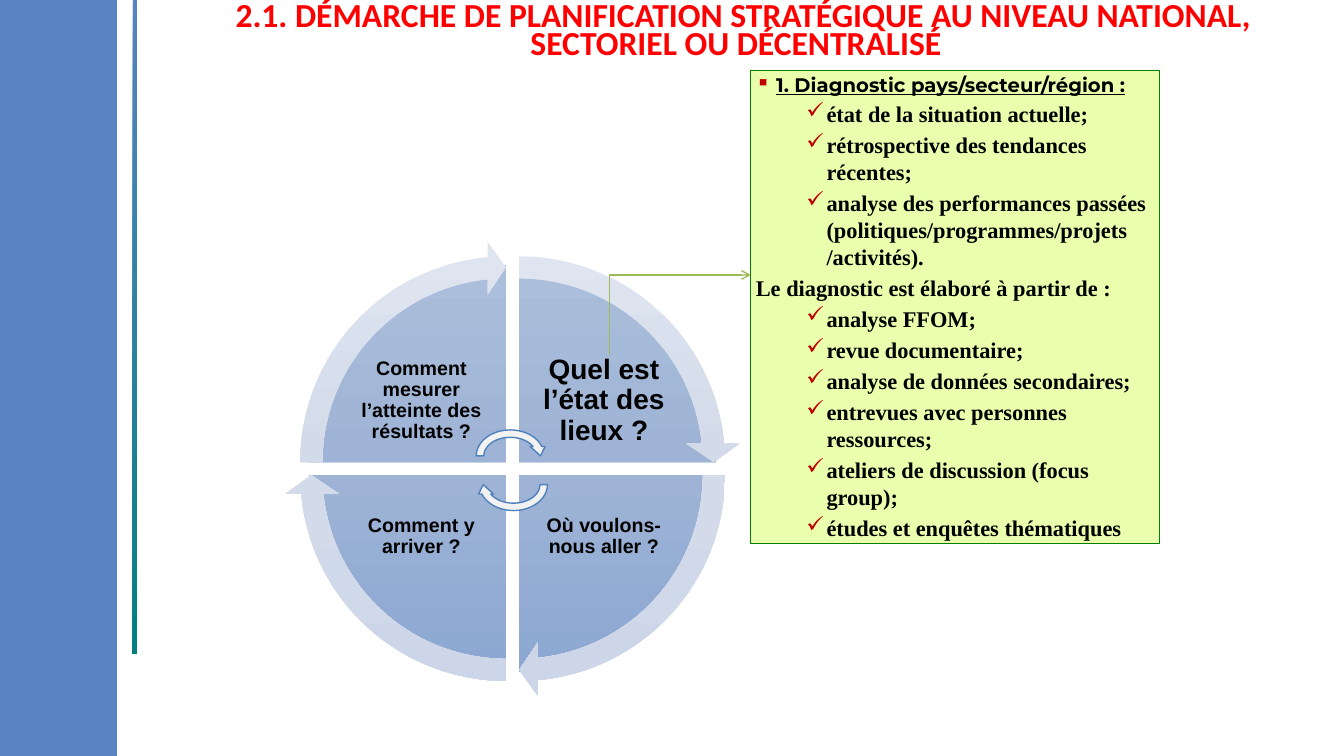
from lxml import etree
from pptx import Presentation
from pptx.dml.color import RGBColor
from pptx.enum.shapes import MSO_CONNECTOR, MSO_SHAPE
from pptx.enum.text import MSO_ANCHOR, PP_ALIGN
from pptx.oxml.ns import qn
from pptx.util import Cm, Pt

RECTANGLE, PIE, CIRCULAR_ARROW = MSO_SHAPE.RECTANGLE, MSO_SHAPE.PIE, MSO_SHAPE.CIRCULAR_ARROW
ELBOW = MSO_CONNECTOR.ELBOW
CENTER, MIDDLE, LEFT = PP_ALIGN.CENTER, MSO_ANCHOR.MIDDLE, PP_ALIGN.LEFT

TITLE = "2.1. DÉMARCHE DE PLANIFICATION STRATÉGIQUE AU NIVEAU NATIONAL, SECTORIEL OU DÉCENTRALISÉ"
QUESTIONS = [
    ("Quel est l’état des lieux ?", "key_question", 1, -1),
    ("Où voulons-nous aller ?", "question", 1, 1),
    ("Comment y arriver ?", "question", -1, 1),
    ("Comment mesurer l’atteinte des résultats ?", "question", -1, -1),
]
DIAGNOSTIC = [
    ("heading", "1. Diagnostic pays/secteur/région :"),
    ("check", "état de la situation actuelle;"),
    ("check", "rétrospective des tendances récentes;"),
    ("check", "analyse des performances passées (politiques/programmes/projets /activités)."),
    ("plain", "Le diagnostic est élaboré à partir de :"),
    ("check", "analyse FFOM;"),
    ("check", "revue documentaire;"),
    ("check", "analyse de données secondaires;"),
    ("check", "entrevues avec personnes ressources;"),
    ("check", "ateliers de discussion (focus group);"),
    ("check", "études et enquêtes thématiques"),
]
LEVELS = {
    "heading": (0, 0.51, "▪"),
    "plain": (0, 0.51, None),
    "check": (1, 1.78, "✓"),
}
HANGING = 0.51

THEME = {
    "side": "5A84C3",
    "accent": [(0, "008080"), (100, "5A84C3")],
    "pie": [(0, "ABBEDB"), (50, "9EB3D5"), (100, "8CA7D2")],
    "ring": [(0, "DFE5F0"), (50, "D3DBEA"), (100, "CDD6E8")],
    "cycle": "F2F2F2",
    "cycle_line": "4F81BD",
    "panel": "EAFFAD",
    "panel_line": "008000",
    "bullet": "C00000",
    "link": "9BBB59",
    "title": ("Calibri", 24, "FF0000"),
    "key_question": ("Arial", 20, "000000"),
    "question": ("Arial", 14, "000000"),
    "heading": ("Montserrat", 14, "000000"),
    "plain": ("Times New Roman", 16, "000000"),
    "check": ("Times New Roman", 16, "000000"),
}

WHEEL_X, WHEEL_Y = 12.92, 11.81
PIE_SIZE, RING_SIZE, HALF_GAP = 9.93, 11.15, 0.165
LABEL_WIDTH, LABEL_HEIGHT, LABEL_DX, LABEL_DY = 3.66, 2.72, 2.3, 1.71
QUARTER, TURN, TOP = 54, 216, 162
RING_THICKNESS, RING_HEAD, RING_HEAD_WIDTH = 0.05, 3.28, 0.06
CYCLE_ARROWS = [(11.91, 10.74, 0), (11.99, 11.46, 180)]
PANEL = (18.92, 1.78, 10.31, 11.91)


def add_node(parent, tag, **attributes):
    return etree.SubElement(parent, qn(tag), {key: str(value) for key, value in attributes.items()})


def paint_gradient(shape, stops, radial=False):
    shape.fill.background()
    blank = shape._element.spPr.find(qn("a:noFill"))
    gradient = etree.Element(qn("a:gradFill"), rotWithShape="1")
    stop_list = add_node(gradient, "a:gsLst")
    for position, color in stops:
        stop = add_node(stop_list, "a:gs", pos=position * 1000)
        add_node(stop, "a:srgbClr", val=color)
    if radial:
        route = add_node(gradient, "a:path", path="circle")
        add_node(route, "a:fillToRect", l=100000, t=100000)
    else:
        add_node(gradient, "a:lin", ang=5400000, scaled=0)
    blank.getparent().replace(blank, gradient)


def add_figure(page, kind, left, top, width, height, fill, line=None, weight=1, radial=False):
    shape = page.shapes.add_shape(kind, Cm(left), Cm(top), Cm(width), Cm(height))
    shape.shadow.inherit = False
    if isinstance(fill, list):
        paint_gradient(shape, fill, radial)
    else:
        shape.fill.solid()
        shape.fill.fore_color.rgb = RGBColor.from_string(fill)
    if line:
        shape.line.color.rgb = RGBColor.from_string(line)
        shape.line.width = Pt(weight)
    else:
        shape.line.fill.background()
    return shape


def add_centered(page, kind, x, y, size, fill, adjustments):
    shape = add_figure(page, kind, x - size / 2, y - size / 2, size, size, fill)
    for index, value in enumerate(adjustments):
        shape.adjustments[index] = value


def style_font(para, role):
    name, size, color = THEME[role]
    para.font.name = name
    para.font.size = Pt(size)
    para.font.bold = True
    para.font.color.rgb = RGBColor.from_string(color)


def set_margins(frame, margin):
    frame.word_wrap = True
    frame.margin_left = frame.margin_right = Cm(margin)
    frame.margin_top = frame.margin_bottom = Cm(margin)


def add_label(page, text, role, left, top, width, height, spacing, margin):
    box = page.shapes.add_textbox(Cm(left), Cm(top), Cm(width), Cm(height))
    set_margins(box.text_frame, margin)
    para = box.text_frame.paragraphs[0]
    para.text = text
    para.alignment = CENTER
    para.line_spacing = spacing
    style_font(para, role)
    return box


def add_wheel(page):
    for index, (text, role, side, level) in enumerate(QUESTIONS):
        start = (TOP + index * QUARTER) % TURN
        end = (start + QUARTER) % TURN
        x, y = WHEEL_X + side * HALF_GAP, WHEEL_Y + level * HALF_GAP
        add_centered(page, PIE, x, y, PIE_SIZE, THEME["pie"], (start, end))
        label = add_label(page, text, role,
                          WHEEL_X + side * LABEL_DX - LABEL_WIDTH / 2,
                          WHEEL_Y + level * LABEL_DY - LABEL_HEIGHT / 2,
                          LABEL_WIDTH, LABEL_HEIGHT, 0.9, 0.05)
        label.text_frame.vertical_anchor = MIDDLE
    for index, (text, role, side, level) in enumerate(QUESTIONS):
        start = (TOP + index * QUARTER) % TURN
        tip = (start + QUARTER - RING_HEAD) % TURN
        x, y = WHEEL_X + side * HALF_GAP, WHEEL_Y + level * HALF_GAP
        add_centered(page, CIRCULAR_ARROW, x, y, RING_SIZE, THEME["ring"],
                     (RING_THICKNESS, RING_HEAD, tip, start, RING_HEAD_WIDTH))
    for left, top, rotation in CYCLE_ARROWS:
        arrow = add_figure(page, CIRCULAR_ARROW, left, top, 1.9, 1.5,
                           THEME["cycle"], THEME["cycle_line"])
        arrow.rotation = rotation


def add_panel(page):
    panel = add_figure(page, RECTANGLE, *PANEL, THEME["panel"], THEME["panel_line"], 0.75)
    frame = panel.text_frame
    set_margins(frame, 0.13)
    frame.vertical_anchor = MIDDLE
    for index, (role, text) in enumerate(DIAGNOSTIC):
        para = frame.add_paragraph() if index else frame.paragraphs[0]
        level, indent, bullet = LEVELS[role]
        para.text = text
        para.level = level
        para.alignment = LEFT
        properties = para._p.get_or_add_pPr()
        properties.set("marL", str(Cm(indent)))
        properties.set("indent", str(-Cm(HANGING)))
        if bullet:
            add_node(add_node(properties, "a:buClr"), "a:srgbClr", val=THEME["bullet"])
            add_node(properties, "a:buChar", char=bullet)
        else:
            add_node(properties, "a:buNone")
        para.space_after = Pt(3)
        style_font(para, role)
        para.font.underline = role == "heading"


def add_link(page):
    link = page.shapes.add_connector(ELBOW, Cm(15.34), Cm(8.94), Cm(PANEL[0]), Cm(6.93))
    link.line.color.rgb = RGBColor.from_string(THEME["link"])
    link.line.width = Pt(1)
    properties = link._element.spPr
    add_node(properties.find(qn("a:ln")), "a:tailEnd", type="arrow")
    add_node(properties, "a:effectLst")
    guides = properties.find(qn("a:prstGeom")).find(qn("a:avLst"))
    add_node(guides, "a:gd", name="adj1", fmla="val 600")


def main():
    deck = Presentation()
    deck.slide_width, deck.slide_height = Cm(33.87), Cm(19.05)
    page = deck.slides.add_slide(deck.slide_layouts[6])
    add_figure(page, RECTANGLE, -0.28, -0.38, 3.23, 19.94, THEME["side"])
    add_figure(page, RECTANGLE, 3.35, -0.69, 0.1, 17.17, THEME["accent"], radial=True)
    add_wheel(page)
    add_panel(page)
    add_link(page)
    title = add_label(page, TITLE, "title", 4.39, 0, 28.32, 1.68, 0.7, 0.13)
    title.text_frame.paragraphs[0]._p.pPr.set("indent", str(Cm(0.36)))
    deck.save("out.pptx")


if __name__ == "__main__":
    main()
